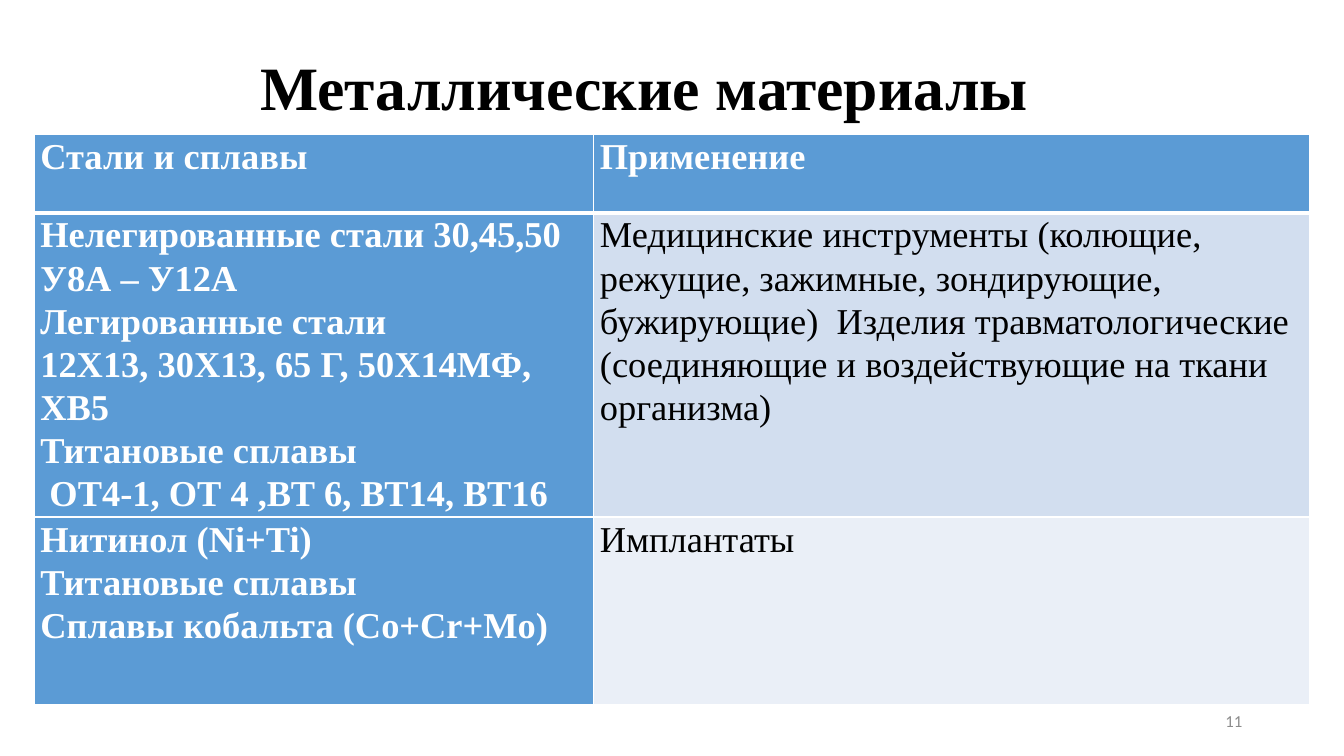
from dataclasses import dataclass

from lxml.etree import SubElement
from pptx import Presentation
from pptx.dml.color import RGBColor
from pptx.enum.text import MSO_ANCHOR, MSO_AUTO_SIZE, PP_ALIGN
from pptx.oxml import parse_xml
from pptx.oxml.ns import nsdecls, qn
from pptx.util import Inches, Pt

TITLE = "Металлические материалы"
PAGE_NUMBER = "11"
ROWS = [
    (["Стали и сплавы"], ["Применение"]),
    (
        [
            "Нелегированные стали 30,45,50",
            "У8А – У12А",
            "Легированные стали",
            "12Х13, 30Х13, 65 Г, 50X14МФ, ХВ5",
            "Титановые сплавы",
            " ОТ4-1, ОТ 4 ,ВТ 6, ВТ14, ВТ16",
        ],
        [
            "Медицинские инструменты (колющие, режущие, зажимные, "
            "зондирующие, бужирующие)  Изделия травматологические "
            "(соединяющие и воздействующие на ткани организма)"
        ],
    ),
    (
        ["Нитинол (Ni+Ti)", "Титановые сплавы", "Сплавы кобальта (Co+Cr+Mo)"],
        ["Имплантаты"],
    ),
]
COLUMN_WIDTHS = [5.55, 7.1]
ROW_HEIGHTS = [0.78, 3.02, 1.86]


@dataclass(frozen=True)
class Theme:
    font: str = "Times New Roman"
    number_font: str = "Calibri"
    title_size: int = 44
    table_size: int = 26
    number_size: int = 12
    line_spacing: float = 1.07
    dark: str = "000000"
    light: str = "FFFFFF"
    muted: str = "8C8C8C"
    accent: str = "5B9BD5"
    bands: tuple = ("D2DEEF", "EAEFF7")
    thin_border: int = 1
    thick_border: int = 3


THEME = Theme()


def add_text(paragraph, text, size, color, bold=False, font=THEME.font):
    run = paragraph.add_run()
    run.text = text
    run.font.name = font
    run.font.size = Pt(size)
    run.font.bold = bold
    run.font.color.rgb = RGBColor.from_string(color)


def clear_margins(frame):
    frame.margin_left = frame.margin_right = 0
    frame.margin_top = frame.margin_bottom = 0


def set_borders(cell, row_index):
    widths = dict.fromkeys(("lnL", "lnR", "lnT", "lnB"), THEME.thin_border)
    if row_index == 0:
        widths["lnB"] = THEME.thick_border
    elif row_index == 1:
        widths["lnT"] = THEME.thick_border
    properties = cell._tc.get_or_add_tcPr()
    for position, (edge, width) in enumerate(widths.items()):
        line = parse_xml(f'<a:{edge} {nsdecls("a")} w="{Pt(width)}"/>')
        fill = SubElement(line, qn("a:solidFill"))
        SubElement(fill, qn("a:srgbClr"), val=THEME.light)
        properties.insert(position, line)


def fill_cell(cell, lines, row_index, column_index):
    emphasized = row_index == 0 or column_index == 0
    background = THEME.accent if emphasized else THEME.bands[row_index - 1]
    cell.fill.solid()
    cell.fill.fore_color.rgb = RGBColor.from_string(background)
    cell.margin_left = cell.margin_right = Inches(0.06)
    cell.margin_top = cell.margin_bottom = 0
    frame = cell.text_frame
    for index, line in enumerate(lines):
        paragraph = frame.add_paragraph() if index else frame.paragraphs[0]
        paragraph.line_spacing = THEME.line_spacing
        color = THEME.light if emphasized else THEME.dark
        add_text(paragraph, line, THEME.table_size, color, emphasized)
    set_borders(cell, row_index)


def add_title(slide):
    title = slide.shapes.title
    title.left, title.top = Inches(2.58), Inches(0.4)
    title.width, title.height = Inches(8), Inches(0.85)
    frame = title.text_frame
    frame.auto_size = MSO_AUTO_SIZE.NONE
    frame.vertical_anchor = MSO_ANCHOR.MIDDLE
    clear_margins(frame)
    paragraph = frame.paragraphs[0]
    paragraph.alignment = PP_ALIGN.LEFT
    paragraph.line_spacing = THEME.line_spacing
    add_text(paragraph, TITLE, THEME.title_size, THEME.dark, True)


def add_materials_table(slide):
    table = slide.shapes.add_table(
        len(ROWS), len(COLUMN_WIDTHS), Inches(0.34), Inches(1.33),
        Inches(sum(COLUMN_WIDTHS)), Inches(sum(ROW_HEIGHTS)),
    ).table
    for column, width in zip(table.columns, COLUMN_WIDTHS):
        column.width = Inches(width)
    for row, height in zip(table.rows, ROW_HEIGHTS):
        row.height = Inches(height)
    for row_index, row in enumerate(ROWS):
        for column_index, lines in enumerate(row):
            cell = table.cell(row_index, column_index)
            fill_cell(cell, lines, row_index, column_index)


def add_page_number(slide):
    shape = slide.shapes.add_textbox(
        Inches(9.42), Inches(6.95), Inches(3), Inches(0.4)
    )
    frame = shape.text_frame
    frame.word_wrap = True
    frame.vertical_anchor = MSO_ANCHOR.MIDDLE
    paragraph = frame.paragraphs[0]
    paragraph.alignment = PP_ALIGN.RIGHT
    add_text(paragraph, PAGE_NUMBER, THEME.number_size, THEME.muted,
             font=THEME.number_font)


def main():
    presentation = Presentation()
    presentation.slide_width = Inches(13.33)
    presentation.slide_height = Inches(7.5)
    slide = presentation.slides.add_slide(presentation.slide_layouts[5])
    add_title(slide)
    add_materials_table(slide)
    add_page_number(slide)
    presentation.save("out.pptx")


if __name__ == "__main__":
    main()
